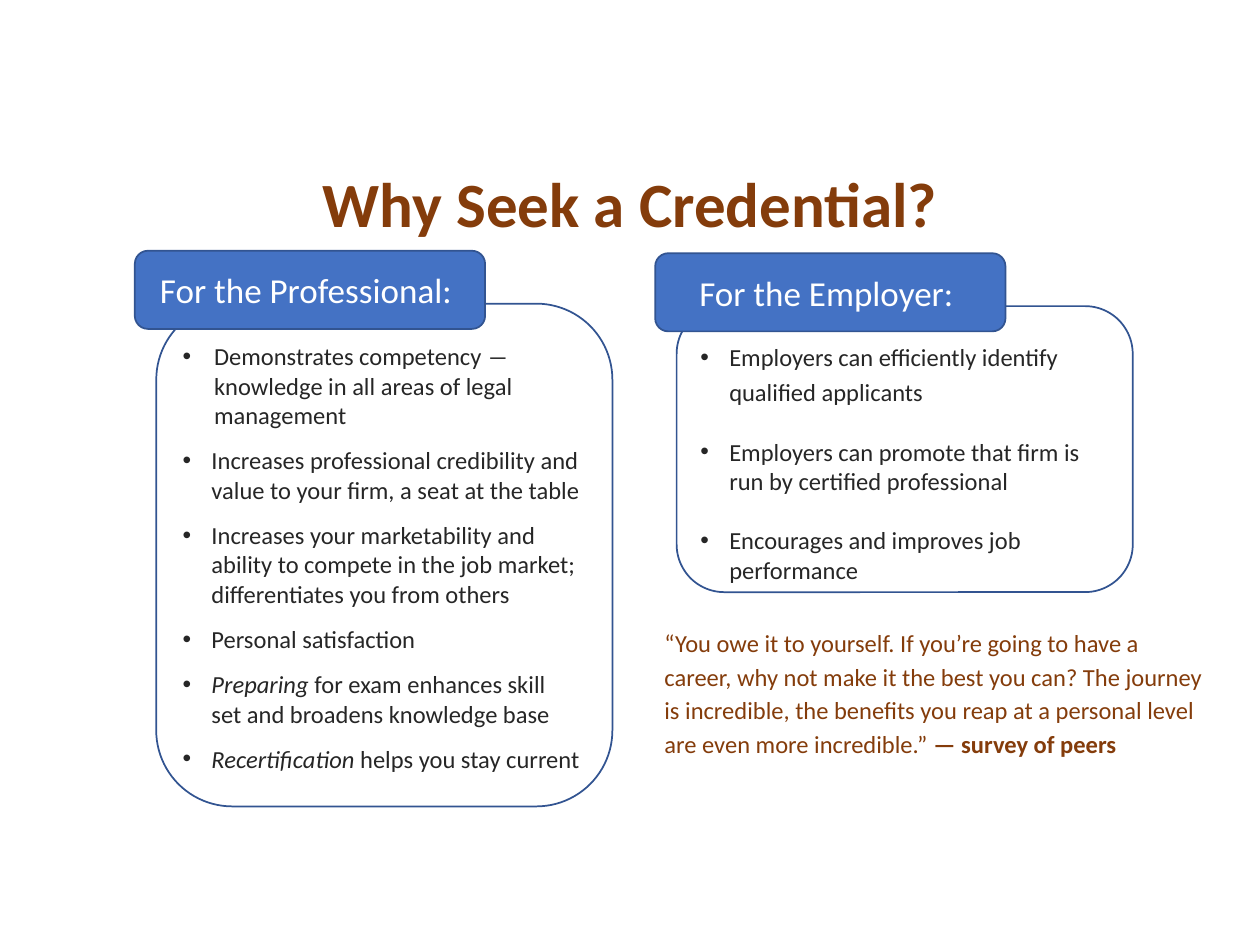
from lxml.etree import SubElement
from pptx import Presentation
from pptx.dml.color import RGBColor
from pptx.enum.shapes import MSO_SHAPE
from pptx.enum.text import MSO_ANCHOR as Anchor, MSO_AUTO_SIZE as AutoSize, PP_ALIGN as Align
from pptx.oxml.ns import qn
from pptx.util import Inches, Pt

FONT = "Calibri"
BROWN, BLUE, NAVY = "843C0B", "4472C4", "325491"
WHITE, DARK = "FFFFFF", "262626"

TITLE = "Why Seek a Credential?"
# Each paragraph is a list of (text, style) runs; "\n" breaks a line.
PANELS = [
    {
        "heading": "For the Professional: ",
        "origin": (1.07, 1.99), "height": 3.99,
        "list_box": (1.35, 2.66, 3.51, 3.56),
        "gap": 9, "first_spacing": 1.0, "first_indent": 0.25,
        "items": [
            [("Demonstrates competency ― knowledge in all areas of legal management", "")],
            [("Increases professional credibility and value to your firm, a seat at the table", "")],
            [("Increases your marketability and ability to compete in the job market; "
              "differentiates you from others", "")],
            [("Personal satisfaction", "")],
            [("Preparing", "italic"), (" for exam enhances skill \nset and broadens knowledge base", "")],
            [("Recertification ", "italic"), ("helps you stay current", "")],
        ],
    },
    {
        "heading": "For the Employer: ",
        "origin": (5.2, 2.01), "height": 2.27,
        "list_box": (5.46, 2.62, 3.47, 2.08),
        "gap": 17, "first_spacing": 1.2, "first_indent": 0.23,
        "items": [
            [("Employers can efficiently identify qualified applicants", "")],
            [("Employers can promote that firm is run by certified professional", "")],
            [("Encourages and improves job performance", "")],
        ],
    },
]
QUOTE = [
    ("“You owe it to yourself. If you’re going to have a career, why not make it the best you can? "
     "The journey is incredible, the benefits you reap at a personal level "
     "are even more incredible.” ", ""),
    ("— survey of peers", "bold"),
]

HEADING_SIZE = (2.78, 0.62)
FRAME_OFFSET = (0.17, 0.42)
FRAME_WIDTH = 3.62
INDENT = 0.23


def color(hex_value):
    return RGBColor.from_string(hex_value)


def add_rounded(slide, box, fill=None, line=None):
    shape = slide.shapes.add_shape(MSO_SHAPE.ROUNDED_RECTANGLE, *map(Inches, box))
    shape.shadow.inherit = False
    for part, value in ((shape.fill, fill), (shape.line.fill, line)):
        if value:
            part.solid()
            part.fore_color.rgb = color(value)
        else:
            part.background()
    if line:
        shape.line.width = Pt(1)
    return shape


def add_bullet(paragraph, indent):
    properties = paragraph._p.get_or_add_pPr()
    properties.set("marL", str(Inches(indent)))
    properties.set("indent", str(-Inches(indent)))
    SubElement(properties, qn("a:buFont")).set("typeface", "Arial")
    SubElement(properties, qn("a:buChar")).set("char", "•")


def write(paragraph, runs, size=14, hex_value=DARK, align=Align.LEFT, spacing=1.0, after=0):
    paragraph.alignment = align
    paragraph.line_spacing = spacing
    paragraph.space_before, paragraph.space_after = Pt(0), Pt(after)
    for text, style in runs:
        for number, line in enumerate(text.split("\n")):
            if number:
                paragraph.add_line_break()
            run = paragraph.add_run()
            run.text = line
            font = run.font
            font.name, font.size = FONT, Pt(size)
            font.color.rgb = color(hex_value)
            font.bold, font.italic = style == "bold", style == "italic"


def prepare(shape, anchor):
    frame = shape.text_frame
    frame.word_wrap = True
    frame.auto_size = AutoSize.NONE
    frame.vertical_anchor = anchor
    return frame


def add_list(slide, panel):
    frame = prepare(slide.shapes.add_textbox(*map(Inches, panel["list_box"])), Anchor.TOP)
    for number, runs in enumerate(panel["items"]):
        first = number == 0
        paragraph = frame.paragraphs[0] if first else frame.add_paragraph()
        add_bullet(paragraph, panel["first_indent"] if first else INDENT)
        write(paragraph, runs, after=panel["gap"],
              spacing=panel["first_spacing"] if first else 1.0)


def add_panel(slide, panel):
    left, top = panel["origin"]
    add_rounded(slide, (left + FRAME_OFFSET[0], top + FRAME_OFFSET[1],
                        FRAME_WIDTH, panel["height"]), line=NAVY)
    heading = add_rounded(slide, (left, top, *HEADING_SIZE), fill=BLUE, line=NAVY)
    write(prepare(heading, Anchor.MIDDLE).paragraphs[0], [(panel["heading"], "")],
          size=20, hex_value=WHITE, align=Align.CENTER)
    add_list(slide, panel)


def main():
    presentation = Presentation()
    presentation.slide_width, presentation.slide_height = Inches(10), Inches(7.5)
    slide = presentation.slides.add_slide(presentation.slide_layouts[5])

    title = slide.shapes.title
    title.left, title.top, title.width, title.height = map(Inches, (0.85, 1.25, 8.3, 0.71))
    write(prepare(title, Anchor.MIDDLE).paragraphs[0], [(TITLE, "bold")],
          size=36, hex_value=BROWN, align=Align.CENTER)

    for panel in PANELS:
        add_panel(slide, panel)

    quote = add_rounded(slide, (5.11, 4.82, 4.61, 1.33))
    write(prepare(quote, Anchor.MIDDLE).paragraphs[0], QUOTE, hex_value=BROWN, spacing=1.14)

    presentation.save("out.pptx")


if __name__ == "__main__":
    main()
